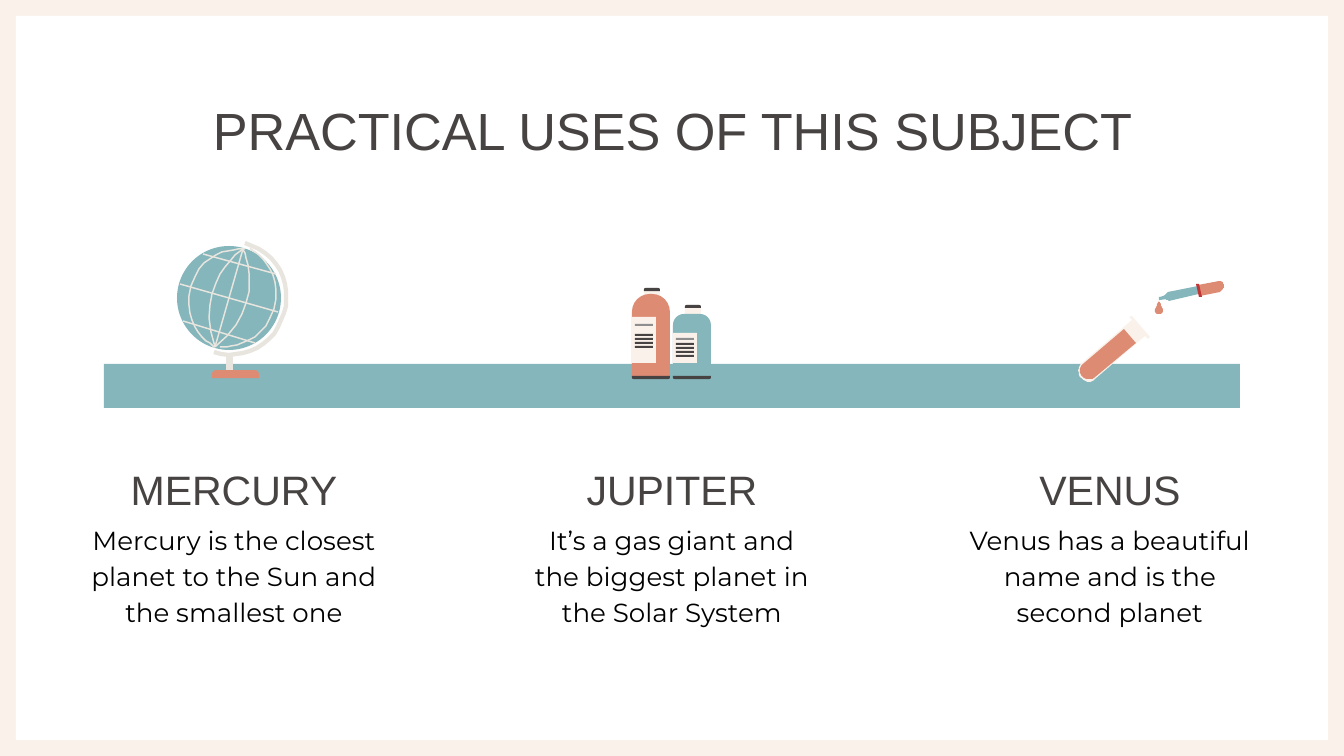
from dataclasses import dataclass

from lxml import etree
from pptx import Presentation
from pptx.dml.color import RGBColor
from pptx.enum.shapes import MSO_CONNECTOR, MSO_SHAPE
from pptx.enum.text import MSO_ANCHOR, MSO_AUTO_SIZE, PP_ALIGN
from pptx.oxml.ns import qn
from pptx.util import Pt

RECT = MSO_SHAPE.RECTANGLE
OVAL = MSO_SHAPE.OVAL
ROUND_ENDS = MSO_SHAPE.ROUND_2_SAME_RECTANGLE
STRAIGHT = MSO_CONNECTOR.STRAIGHT
CENTER = PP_ALIGN.CENTER
TOP = MSO_ANCHOR.TOP
NO_AUTOFIT = MSO_AUTO_SIZE.NONE

PX = 9144000 / 1344  # EMU per px
CURVE_STEPS = 12


@dataclass(frozen=True)
class Theme:
    cream: RGBColor = RGBColor.from_string("FAF1EA")
    white: RGBColor = RGBColor.from_string("FFFFFF")
    black: RGBColor = RGBColor.from_string("000000")
    dark: RGBColor = RGBColor.from_string("464342")
    gray: RGBColor = RGBColor.from_string("8E8E8E")
    pale: RGBColor = RGBColor.from_string("E8E4DE")
    teal: RGBColor = RGBColor.from_string("84B6BC")
    coral: RGBColor = RGBColor.from_string("DE8B74")
    red: RGBColor = RGBColor.from_string("BF3636")
    heading_font: str = "Arial"
    body_font: str = "Montserrat"
    title_size: int = 28
    heading_size: int = 22
    body_size: int = 14


theme = Theme()


def write_text(holder, text, box, *, size, color, font, top_inset=13, spacing=1.15):
    """Place a text holder at box (px) and fill it with one centred paragraph."""
    holder.left, holder.top, holder.width, holder.height = (round(v * PX) for v in box)
    frame = holder.text_frame
    frame.word_wrap = True
    frame.auto_size = NO_AUTOFIT
    frame.vertical_anchor = TOP
    frame.margin_left = frame.margin_right = frame.margin_bottom = round(13 * PX)
    frame.margin_top = round(top_inset * PX)
    paragraph = frame.paragraphs[0]
    paragraph.alignment = CENTER
    paragraph.line_spacing = spacing
    run = paragraph.add_run()
    run.text = text
    run.font.size = Pt(size)
    run.font.name = font
    run.font.color.rgb = color


def add_block(preset, x, y, width, height, color, corners=()):
    """Add a filled preset shape; corners are its adjustment values."""
    block = slide.shapes.add_shape(preset, *(round(v * PX) for v in (x, y, width, height)))
    block.shadow.inherit = False
    block.fill.solid()
    block.fill.fore_color.rgb = color
    block.line.fill.background()
    for index, corner in enumerate(corners):
        block.adjustments[index] = corner
    return block


presentation = Presentation()
presentation.slide_width = round(1344 * PX)
presentation.slide_height = round(756 * PX)
slide = presentation.slides.add_slide(presentation.slide_layouts[5])
slide.background.fill.solid()
slide.background.fill.fore_color.rgb = theme.cream

title = slide.shapes.title
panel = add_block(RECT, 16, 16, 1312, 724, theme.white)
title.element.addprevious(panel.element)
write_text(title, "PRACTICAL USES OF THIS SUBJECT", (46, 79, 1253, 85),
           size=theme.title_size, color=theme.dark, font=theme.heading_font,
           top_inset=19, spacing=1.0)

# Three planet columns
planets = [
    ("MERCURY", "Mercury is the closest planet to the Sun and the smallest one"),
    ("JUPITER", "It’s a gas giant and the biggest planet in the Solar System"),
    ("VENUS", "Venus has a beautiful name and is the second planet"),
]
for column, (planet, description) in enumerate(planets):
    center = 234 + 438 * column
    write_text(slide.shapes.add_textbox(0, 0, 0, 0), description, (center - 160, 507, 320, 187),
               size=theme.body_size, color=theme.black, font=theme.body_font)
    write_text(slide.shapes.add_textbox(0, 0, 0, 0), planet, (center - 130, 438, 260, 39),
               size=theme.heading_size, color=theme.dark, font=theme.heading_font, top_inset=19)

# Shelf and the solid parts of the globe
add_block(RECT, 104, 364, 1136, 44, theme.teal)
add_block(ROUND_ENDS, 212, 370, 47, 8, theme.coral, (0.5, 0))
add_block(OVAL, 177, 246, 104, 104, theme.teal)

# Bottles: left, neck top, body top, shoulder radius, colour, label top, gray line, barcode top
bottles = [
    (673, 305, 314, 0.29, theme.teal, 333, 338, 343),
    (632, 288, 294, 0.47, theme.coral, 317, 324, 334),
]
for left, neck, body, shoulder, color, label, gray_line, barcode in bottles:
    add_block(ROUND_ENDS, left + 12, neck, 16, 9, theme.cream, (0.3, 0))
    add_block(ROUND_ENDS, left + 12, neck, 16, 3, theme.dark, (0.5, 0))
    add_block(ROUND_ENDS, left, body, 38, 379 - body, color, (shoulder, 0.07))
    add_block(ROUND_ENDS, left, 376, 38, 3, theme.dark, (0, 0.5))
    add_block(RECT, left, label, 24, 363 - label, theme.cream)
    add_block(RECT, left + 3, gray_line, 18, 2, theme.gray)
    for bar in range(4):
        add_block(RECT, left + 3, barcode + 4 * bar, 18, 2, theme.dark)

# Globe stand, axis and parallels
globe_lines = [
    (230, 370, 230, 355, 3.77),
    (243, 249, 215, 347, 0.78),
    (180, 284, 278, 312, 0.78),
    (203, 254, 276, 274, 0.78),
    (183, 321, 255, 343, 0.78),
]
for *ends, width in globe_lines:
    rod = slide.shapes.add_connector(STRAIGHT, *(round(v * PX) for v in ends))
    rod.line.color.rgb = theme.pale
    rod.line.width = Pt(width)
    etree.SubElement(rod.element.spPr, qn("a:effectLst"))

# Outlines: colour, line width (None for a filled outline), then the points;
# a pair is a corner and six numbers are a Bézier curve.
outlines = [
    # Globe meridians and arm
    (theme.pale, 0.78, [(243, 249), (243, 249, 269, 305, 215, 347)]),
    (theme.pale, 0.78, [(243, 249), (243, 249, 192, 284, 215, 347)]),
    (theme.pale, 0.78, [(245, 249), (245, 249, 203, 246, 191, 286),
                        (179, 328, 215, 347, 215, 347)]),
    (theme.pale, 0.78, [(250, 249), (250, 249, 286, 267, 274, 309),
                        (262, 349, 220, 347, 220, 347)]),
    (theme.pale, 2.27, [(214, 352), (243, 362, 276, 344, 284, 313),
                        (293, 284, 276, 251, 245, 243)]),
    # Test tube and its liquid
    (theme.cream, None, [(1132, 316), (1129, 317), (1132, 320), (1082, 363),
                         (1078, 367, 1077, 372, 1081, 378), (1083, 380, 1086, 382, 1089, 382),
                         (1091, 382, 1094, 381, 1095, 379), (1145, 336), (1148, 339),
                         (1150, 337)]),
    (theme.coral, None, [(1124, 329), (1083, 364), (1079, 367, 1079, 372, 1082, 376),
                         (1083, 378, 1086, 379, 1089, 379), (1091, 379, 1093, 379, 1094, 378),
                         (1136, 343)]),
    # Dropper tip, barrel, bulb, ring and drop
    (theme.teal, None, [(1181, 290), (1160, 297), (1159, 297, 1159, 300, 1160, 300),
                        (1181, 297), (1185, 296, 1184, 290, 1181, 290)]),
    (theme.teal, None, [(1198, 286), (1168, 292), (1166, 293, 1165, 296, 1163, 297),
                        (1164, 298), (1166, 299, 1167, 300, 1169, 301), (1199, 294),
                        (1201, 294, 1202, 293, 1201, 292), (1200, 288),
                        (1200, 286, 1199, 286, 1198, 286)]),
    (theme.coral, None, [(1219, 281), (1198, 285), (1200, 296), (1220, 292),
                         (1223, 290, 1224, 288, 1224, 285), (1223, 282, 1222, 281, 1219, 281)]),
    (theme.red, None, [(1199, 284), (1196, 284), (1199, 297), (1202, 297)]),
    (theme.coral, None, [(1159, 301), (1159, 301, 1155, 308, 1155, 310),
                         (1155, 313, 1156, 314, 1159, 314), (1162, 314, 1163, 313, 1163, 310),
                         (1163, 308, 1159, 301, 1159, 301)]),
]
for color, width, (start, *segments) in outlines:
    points = [start]
    for segment in segments:
        if len(segment) == 2:
            points.append(segment)
            continue
        x0, y0 = points[-1]
        x1, y1, x2, y2, x3, y3 = segment
        for step in range(1, CURVE_STEPS + 1):
            t = step / CURVE_STEPS
            a, b, c, d = (1 - t) ** 3, 3 * t * (1 - t) ** 2, 3 * t * t * (1 - t), t ** 3
            points.append((a * x0 + b * x1 + c * x2 + d * x3,
                           a * y0 + b * y1 + c * y2 + d * y3))
    builder = slide.shapes.build_freeform(*start, scale=PX)
    builder.add_line_segments(points[1:], close=width is None)
    outline = builder.convert_to_shape()
    outline.shadow.inherit = False
    if width is None:
        outline.fill.solid()
        outline.fill.fore_color.rgb = color
        outline.line.fill.background()
    else:
        outline.fill.background()
        outline.line.color.rgb = color
        outline.line.width = Pt(width)

presentation.save("out.pptx")
